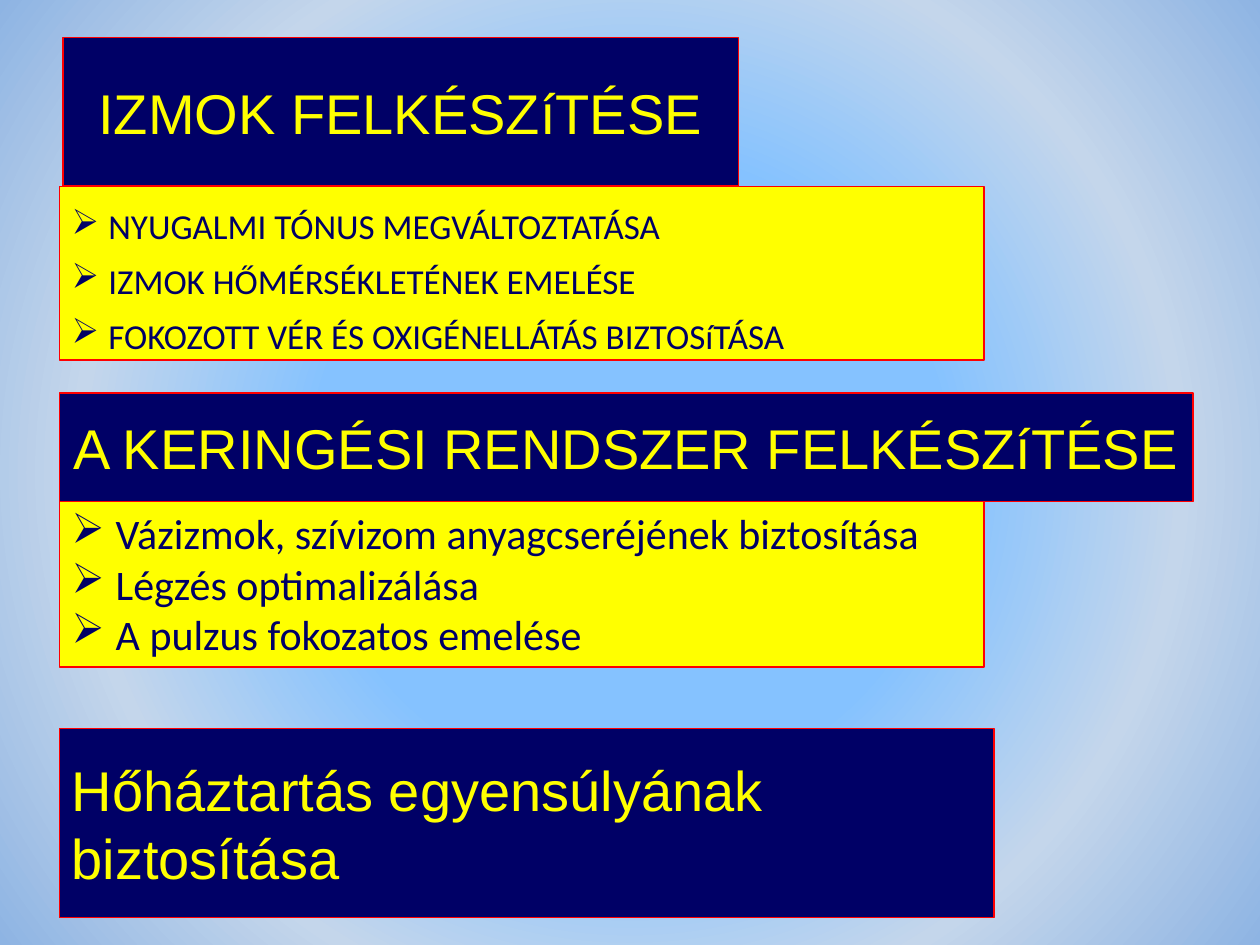
from lxml import etree
from pptx import Presentation, util as u
from pptx.dml import color
from pptx.enum import shapes, text
from pptx.oxml import ns

WIDTH, HEIGHT = 10, 7.5
NAVY, YELLOW, RED = "000066", "FFFF00", "FF0000"
LEFT, LIST_WIDTH = 0.047, 0.734
BACKDROP = [(40, "85C2FF"), (70, "C4D6EB"), (100, "8EB4E3")]


def rgb(code):
    """Turn a hex string into a colour."""
    return color.RGBColor.from_string(code)


def add_node(parent, tag, **attributes):
    """Append a DrawingML element to a parent."""
    return etree.SubElement(parent, ns.qn(tag), attributes)


def paint_background(slide, stops):
    """Fill the background with a gradient spreading from the centre."""
    fill = slide.background.fill
    fill.gradient()
    gradient = slide.background._cSld.find(".//" + ns.qn("a:gradFill"))
    for child in list(gradient):
        gradient.remove(child)
    stop_list = add_node(gradient, "a:gsLst")
    for share, code in stops:
        stop = add_node(stop_list, "a:gs", pos=str(share * 1000))
        add_node(stop, "a:srgbClr", val=code)
    circle = add_node(gradient, "a:path", path="circle")
    add_node(circle, "a:fillToRect", l="50000", t="50000", r="50000", b="50000")


def add_box(slide, left, top, width, height, fill, anchor):
    """Add a red-edged rectangle placed by shares of the slide's size."""
    box = slide.shapes.add_shape(
        shapes.MSO_SHAPE.RECTANGLE,
        u.Inches(left * WIDTH), u.Inches(top * HEIGHT),
        u.Inches(width * WIDTH), u.Inches(height * HEIGHT))
    box.shadow.inherit = False
    box.fill.solid()
    box.fill.fore_color.rgb = rgb(fill)
    box.line.color.rgb = rgb(RED)
    box.line.width = u.Pt(0.75)
    box.text_frame.word_wrap = True
    box.text_frame.vertical_anchor = anchor
    return box


def add_span(para, words, size, font, code):
    """Add one styled run to a paragraph."""
    span = para.add_run()
    span.text = words
    span.font.size = u.Pt(size)
    span.font.name = font
    span.font.color.rgb = rgb(code)


def add_heading(slide, words, left, top, width, height, align):
    """Add a navy heading box with yellow text."""
    box = add_box(slide, left, top, width, height, NAVY, text.MSO_ANCHOR.MIDDLE)
    para = box.text_frame.paragraphs[0]
    para.alignment = align
    add_span(para, words, 32, "Arial", YELLOW)


def add_list(slide, items, top, height, size, spacing):
    """Add a yellow box of arrow-bulleted lines."""
    box = add_box(slide, LEFT, top, LIST_WIDTH, height, YELLOW, text.MSO_ANCHOR.TOP)
    frame = box.text_frame
    hang = u.Inches(size * 0.0146)
    for index, words in enumerate(items):
        para = frame.add_paragraph() if index else frame.paragraphs[0]
        para.alignment = text.PP_ALIGN.LEFT
        para.line_spacing = spacing
        properties = para._p.get_or_add_pPr()
        properties.set("marL", str(hang))
        properties.set("indent", str(-hang))
        add_node(properties, "a:buChar", char="➢")
        add_span(para, words, size, "Calibri", NAVY)


def main():
    """Build the slide and save it."""
    deck = Presentation()
    deck.slide_width, deck.slide_height = u.Inches(WIDTH), u.Inches(HEIGHT)
    page = deck.slides.add_slide(deck.slide_layouts[6])
    paint_background(page, BACKDROP)
    centre, left = text.PP_ALIGN.CENTER, text.PP_ALIGN.LEFT

    add_heading(page, "IZMOK FELKÉSZíTÉSE", 0.05, 0.04, 0.536, 0.157, centre)
    add_list(page, ["NYUGALMI TÓNUS MEGVÁLTOZTATÁSA",
                    "IZMOK HŐMÉRSÉKLETÉNEK EMELÉSE",
                    "FOKOZOTT VÉR ÉS OXIGÉNELLÁTÁS BIZTOSíTÁSA"],
             0.197, 0.184, 20, 1.3)
    add_heading(page, "A KERINGÉSI RENDSZER FELKÉSZíTÉSE",
                LEFT, 0.416, 0.9, 0.115, centre)
    add_list(page, ["Vázizmok, szívizom anyagcseréjének biztosítása",
                    "Légzés optimalizálása",
                    "A pulzus fokozatos emelése"],
             0.531, 0.175, 24, 1.0)
    add_heading(page, "Hőháztartás egyensúlyának biztosítása",
                LEFT, 0.771, 0.742, 0.2, left)
    deck.save("out.pptx")


if __name__ == "__main__":
    main()
